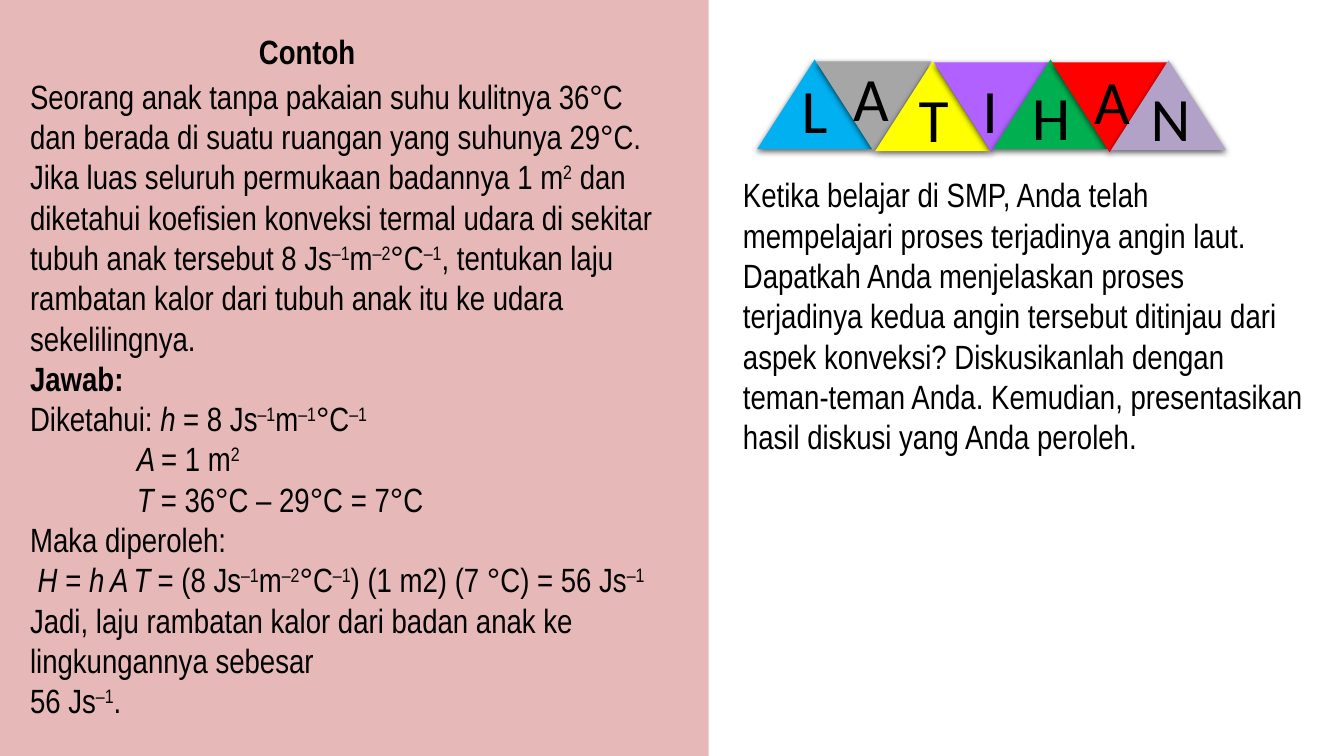
from lxml import etree
from pptx import Presentation
from pptx import util as u
from pptx.dml.color import RGBColor
from pptx.enum import shapes, text
from pptx.oxml import ns

BLACK = RGBColor(0x00, 0x00, 0x00)
PINK = RGBColor(0xE6, 0xB9, 0xB8)
BLUE = RGBColor(0x00, 0xB0, 0xF0)
GREY = RGBColor(0xA6, 0xA6, 0xA6)
YELLOW = RGBColor(0xFF, 0xFF, 0x00)
PURPLE = RGBColor(0xB0, 0x61, 0xFF)
GREEN = RGBColor(0x00, 0xB0, 0x50)
RED = RGBColor(0xFF, 0x00, 0x00)
LILAC = RGBColor(0xB3, 0xA2, 0xC7)

EXAMPLE = [
    ("Seorang anak tanpa pakaian suhu kulitnya 36°C dan berada di suatu ruangan yang "
     "suhunya 29°C. Jika luas seluruh permukaan badannya 1 m^2^ dan diketahui koefisien "
     "konveksi termal udara di sekitar tubuh anak tersebut 8 Js^–1^m^–2^°C^–1^, tentukan "
     "laju rambatan kalor dari tubuh anak itu ke udara sekelilingnya.", False, 0),
    ("Jawab:", True, 0),
    ("Diketahui: _h _= 8 Js^–1^m^–1^°C^–1^", False, 0),
    ("_A _= 1 m^2^", False, 1.06),
    ("_T _= 36°C – 29°C = 7°C", False, 1.06),
    ("Maka diperoleh:", False, 0),
    (" _H _= _h A T _= (8 Js^–1^m^–2^°C^–1^) (1 m2) (7 °C) = 56 Js^–1^ Jadi, laju "
     "rambatan kalor dari badan anak ke lingkungannya sebesar \n56 Js^–1^.", False, 0),
]
EXERCISE = [
    ("Ketika belajar di SMP, Anda telah mempelajari proses terjadinya angin laut. "
     "Dapatkah Anda menjelaskan proses terjadinya kedua angin tersebut ditinjau dari "
     "aspek konveksi? Diskusikanlah dengan teman-teman Anda. Kemudian, presentasikan "
     "hasil diskusi yang Anda peroleh.", False, 0),
]
BANNER = [
    ("L", BLUE, 0.59, (7.85, 0.66, 0.46)),
    ("A", GREY, 0.61, (8.36, 0.55, 0.56)),
    ("T", YELLOW, 0.61, (9.01, 0.75, 0.5)),
    ("I", PURPLE, 0.62, (9.64, 0.66, 0.36)),
    ("H", GREEN, 0.59, (10.13, 0.73, 0.59)),
    ("A", RED, 0.62, (10.75, 0.58, 0.56)),
    ("N", LILAC, 0.6, (11.31, 0.74, 0.6)),
]


class Lesson:
    """Draw on one slide; in text, ^ marks superscript and _ marks italic."""

    def __init__(self, slide):
        self.slide = slide
        self.body_font, self.body_size = "Arial Narrow", 24
        self.letter_font, self.letter_size = "Calibri", 44

    def solid(self, parent, preset, box, color):
        solid = parent.add_shape(preset, *map(u.Inches, box))
        solid.shadow.inherit = False
        solid.fill.solid()
        solid.fill.fore_color.rgb = color
        solid.line.fill.background()
        return solid

    def triangle(self, parent, box, color, flipped):
        triangle = self.solid(parent, shapes.MSO_SHAPE.ISOSCELES_TRIANGLE, box, color)
        triangle.rotation = 180 if flipped else 0
        effects = triangle._element.spPr.find(ns.qn("a:effectLst"))
        shadow = etree.SubElement(effects, ns.qn("a:outerShdw"), blurRad=str(u.Pt(4.5)),
                                  dist=str(u.Pt(1.5)), dir="5400000", rotWithShape="0")
        tint = etree.SubElement(shadow, ns.qn("a:srgbClr"), val=str(BLACK))
        etree.SubElement(tint, ns.qn("a:alpha"), val="63000")

    def frame(self, parent, box, wrap):
        frame = parent.add_textbox(*map(u.Inches, box)).text_frame
        frame.word_wrap = wrap
        frame.auto_size = text.MSO_AUTO_SIZE.SHAPE_TO_FIT_TEXT
        return frame

    def run(self, paragraph, wording, font, size, bold=False, italic=False, raised=False):
        run = paragraph.add_run()
        run.text = wording
        run.font.name, run.font.size = font, u.Pt(size)
        run.font.bold, run.font.italic = bold, italic
        run.font.color.rgb = BLACK
        if raised:
            run._r.get_or_add_rPr().set("baseline", "30000")

    def marked_line(self, paragraph, line, bold):
        for i, part in enumerate(line.split("^")):
            for j, piece in enumerate(part.split("_")):
                if piece:
                    self.run(paragraph, piece, self.body_font, self.body_size,
                             bold, j % 2 == 1, i % 2 == 1)

    def passage(self, box, paragraphs, wrap=True):
        frame = self.frame(self.slide.shapes, box, wrap)
        for number, (wording, bold, indent) in enumerate(paragraphs):
            paragraph = frame.add_paragraph() if number else frame.paragraphs[0]
            if indent:
                properties = paragraph._p.get_or_add_pPr()
                properties.set("marL", "0")
                properties.set("indent", str(u.Inches(indent)))
            for row, line in enumerate(wording.split("\n")):
                if row:
                    paragraph.add_line_break()
                self.marked_line(paragraph, line, bold)

    def letter(self, parent, left, top, width, wording):
        paragraph = self.frame(parent, (left, top, width, 0.84), False).paragraphs[0]
        paragraph.alignment = text.PP_ALIGN.CENTER
        self.run(paragraph, wording, self.letter_font, self.letter_size)

    def banner(self, left, step, letters):
        parent = self.slide.shapes.add_group_shape().shapes
        for i, (_, color, top, _) in enumerate(letters):
            self.triangle(parent, (left + i * step, top, 1.14, 0.89), color, i % 2 == 1)
        for wording, _, _, place in letters:
            self.letter(parent, *place, wording)


def main():
    deck = Presentation()
    deck.slide_width, deck.slide_height = u.Inches(13.33), u.Inches(7.5)
    slide = deck.slides.add_slide(deck.slide_layouts[6])
    lesson = Lesson(slide)
    lesson.solid(slide.shapes, shapes.MSO_SHAPE.RECTANGLE, (0, 0, 7.03, 7.5), PINK)
    lesson.passage((0.2, 0.7, 6.46, 6.56), EXAMPLE)
    lesson.passage((2.47, 0.26, 1.17, 0.5), [("Contoh", True, 0)], wrap=False)
    lesson.passage((7.27, 1.68, 5.78, 2.93), EXERCISE)
    lesson.banner(7.51, 0.585, BANNER)
    deck.save("out.pptx")


if __name__ == "__main__":
    main()
